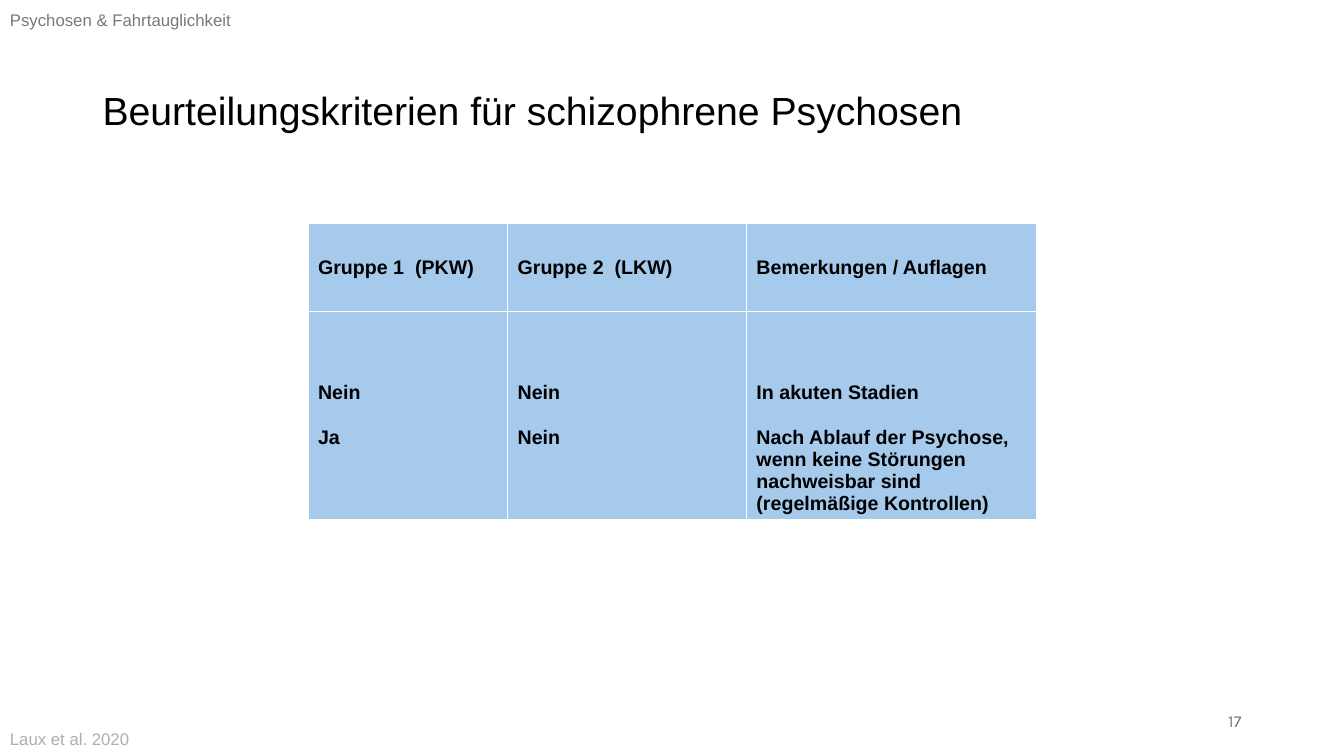
from lxml import etree
from pptx import Presentation
from pptx.dml.color import RGBColor
from pptx.enum.text import MSO_ANCHOR, PP_ALIGN
from pptx.oxml.ns import qn
from pptx.util import Cm, Pt

LEFT, RIGHT = PP_ALIGN.LEFT, PP_ALIGN.RIGHT
TOP, MIDDLE = MSO_ANCHOR.TOP, MSO_ANCHOR.MIDDLE

BLACK, WHITE, GREY, PALE, BLUE = "000000", "FFFFFF", "797979", "AEAEAE", "A6CAEC"
TITLE_ONLY = 5

HEADS = ["Gruppe 1  (PKW)", "Gruppe 2  (LKW)", "Bemerkungen / Auflagen"]
RULES = [
    ["Nein", "Ja"],
    ["Nein", "Nein"],
    ["In akuten Stadien",
     "Nach Ablauf der Psychose, wenn keine Störungen nachweisbar sind \v"
     "(regelmäßige Kontrollen)"],
]
WIDTHS = [5.03, 6.02, 7.32]
HEIGHTS = [2.23, 5.23]


def paint(target, color):
    """Set the colour of a font."""
    target.color.rgb = RGBColor.from_string(color)


def style(para, size, color, name="Arial", bold=False, align=LEFT):
    """Format one paragraph."""
    para.alignment = align
    para.font.size = Pt(size)
    para.font.name = name
    para.font.bold = bold
    paint(para.font, color)


def add_title(slide, text):
    """Fill and place the title placeholder."""
    title = slide.shapes.title
    title.left, title.top = Cm(2.33), Cm(1.01)
    title.width, title.height = Cm(29.21), Cm(3.68)
    frame = title.text_frame
    frame.text = text
    frame.vertical_anchor = MIDDLE
    para = frame.paragraphs[0]
    para.line_spacing = 0.9
    style(para, 28, BLACK)


def add_note(slide, text, box, color, anchor=MIDDLE, **font):
    """Add a small text box at the edge of the slide."""
    frame = slide.shapes.add_textbox(*map(Cm, box)).text_frame
    frame.word_wrap = True
    frame.vertical_anchor = anchor
    frame.text = text
    style(frame.paragraphs[0], 12, color, **font)


def add_edges(cell):
    """Draw thin white borders ahead of the cell's fill."""
    props = cell._tc.get_or_add_tcPr()
    for i, side in enumerate(("lnL", "lnR", "lnT", "lnB")):
        line = etree.Element(qn("a:" + side), w=str(Pt(1)))
        fill = etree.SubElement(line, qn("a:solidFill"))
        etree.SubElement(fill, qn("a:srgbClr"), val=WHITE)
        props.insert(i, line)


def fill_cell(cell, lines, anchor):
    """Write the lines of a cell, one blank line's height apart."""
    cell.fill.solid()
    cell.fill.fore_color.rgb = RGBColor.from_string(BLUE)
    add_edges(cell)
    cell.vertical_anchor = anchor
    cell.text = "\n".join(lines)
    for i, para in enumerate(cell.text_frame.paragraphs):
        style(para, 14, BLACK, bold=True)
        para.space_before = Pt(16 if i else 0)


def add_grid(slide):
    """Add the table of criteria."""
    box = (7.76, 5.62, sum(WIDTHS), sum(HEIGHTS))
    grid = slide.shapes.add_table(2, 3, *map(Cm, box)).table
    grid.first_row = grid.horz_banding = False
    for row, height in zip(grid.rows, HEIGHTS):
        row.height = Cm(height)
    for i, width in enumerate(WIDTHS):
        grid.columns[i].width = Cm(width)
        fill_cell(grid.cell(0, i), [HEADS[i]], MIDDLE)
        rule = grid.cell(1, i)
        fill_cell(rule, RULES[i], TOP)
        rule.margin_top = Cm(1.78)


def main():
    deck = Presentation()
    deck.slide_width, deck.slide_height = Cm(33.87), Cm(19.05)
    slide = deck.slides.add_slide(deck.slide_layouts[TITLE_ONLY])

    # Title and table
    add_title(slide, "Beurteilungskriterien für schizophrene Psychosen")
    add_grid(slide)

    # Page number, citation and running head
    add_note(slide, "17", (23.92, 17.66, 7.62, 1.01), GREY, name="Karla", align=RIGHT)
    add_note(slide, "Laux et al. 2020", (0, 18.24, 20.4, 0.77), PALE, anchor=TOP)
    add_note(slide, "Psychosen & Fahrtauglichkeit", (0, 0, 7.77, 1.01), GREY)

    deck.save("out.pptx")


if __name__ == "__main__":
    main()
